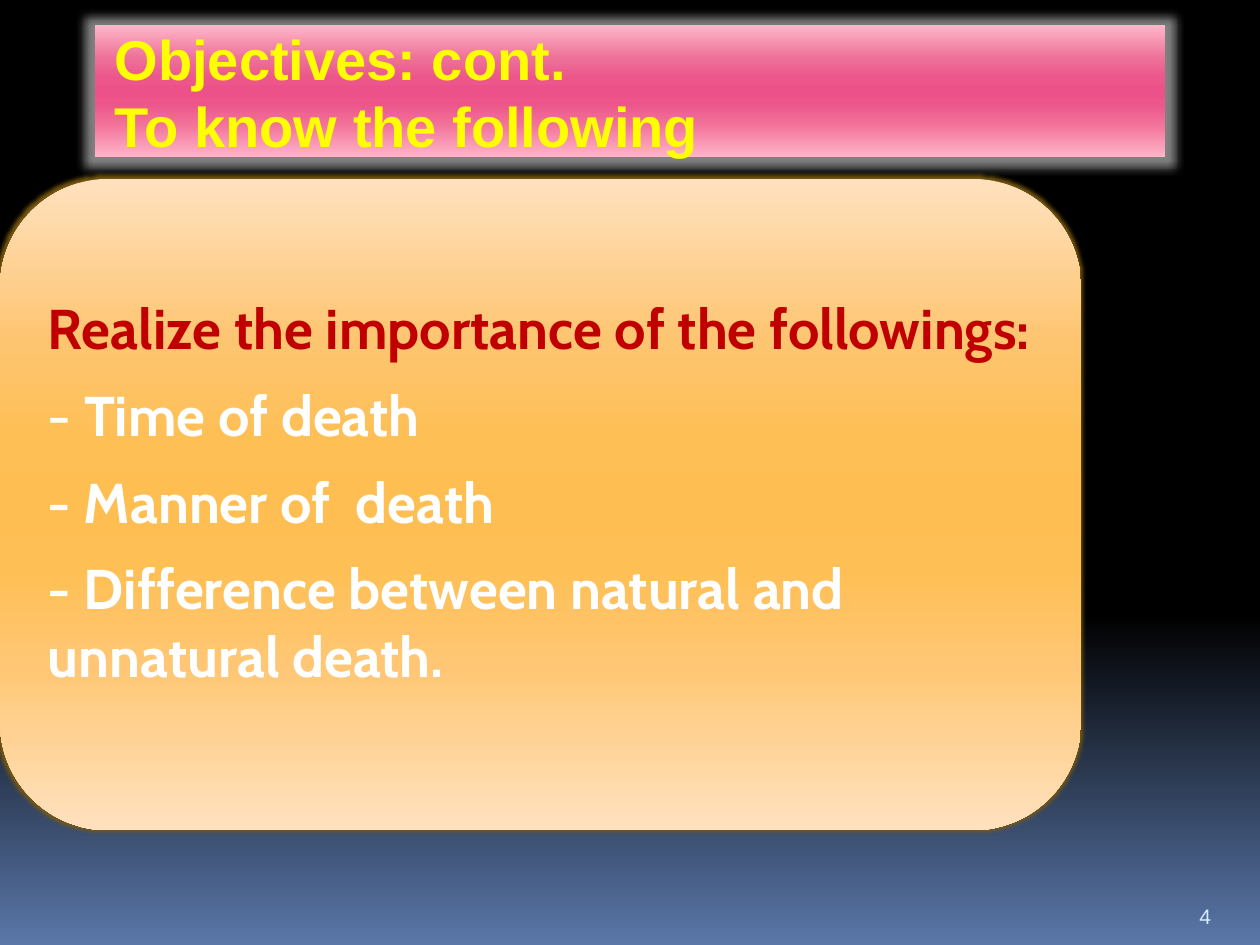
from lxml.etree import SubElement
from pptx import Presentation
from pptx.dml.color import RGBColor
from pptx.enum.shapes import MSO_SHAPE as Shape
from pptx.enum.text import MSO_ANCHOR as Anchor, MSO_AUTO_SIZE as AutoSize, PP_ALIGN as Align
from pptx.oxml.ns import qn
from pptx.util import Inches, Pt

BACKGROUND = [(0, "000000"), (65, "000000"), (100, "5A77A9")]
PINK = [(0, "FFB6C9"), (25, "ED7198"), (40, "EC568B"), (50, "EC5289"),
        (60, "EC568B"), (75, "F2729A"), (100, "FFB6C9")]
ORANGE = [(0, "FFE1BF"), (25, "FEC570"), (40, "FEBF55"), (50, "FEBE51"),
          (60, "FEBF55"), (75, "FFC775"), (100, "FFE1BF")]
TITLE_LINES = ["Objectives: cont.", "To know the following"]
OBJECTIVES = [
    [("Realize the importance of the followings:", "C00000", True)],
    [("- ", "FFFFFF", False), ("Time of death", "FFFFFF", True)],
    [("- Manner of  death", "FFFFFF", True)],
    [("- Difference between natural and unnatural death.", "FFFFFF", True)],
]
PAGE_NUMBER = "4"


def place(shape, left, top, width, height):
    shape.left, shape.top = Inches(left), Inches(top)
    shape.width, shape.height = Inches(width), Inches(height)


def paint_gradient(fill, element, stops):
    fill.gradient()
    fill.gradient_angle = 270
    stop_list = element.find(".//" + qn("a:gsLst"))
    for stop in list(stop_list):
        stop_list.remove(stop)
    for position, color in stops:
        stop = SubElement(stop_list, qn("a:gs"), pos=str(position * 1000))
        SubElement(stop, qn("a:srgbClr"), val=color)


def add_glow(shape, radius, color):
    shape.shadow.inherit = False
    effects = shape.element.spPr.find(qn("a:effectLst"))
    glow = SubElement(effects, qn("a:glow"), rad=str(Inches(radius)))
    SubElement(glow, qn("a:srgbClr"), val=color)


def add_run(paragraph, text, font, size, color, bold=False):
    run = paragraph.add_run()
    run.text = text
    run.font.name, run.font.size, run.font.bold = font, Pt(size), bold
    run.font.color.rgb = RGBColor.from_string(color)


def build_title(slide):
    title = slide.shapes.title
    place(title, 0.75, 0.2, 8.5, 1.05)
    paint_gradient(title.fill, title.element, PINK)
    title.line.fill.background()
    add_glow(title, 0.14, "808080")
    frame = title.text_frame
    frame.auto_size, frame.vertical_anchor = AutoSize.NONE, Anchor.MIDDLE
    frame.margin_left = Inches(0.16)
    paragraph = frame.paragraphs[0]
    paragraph.alignment = Align.LEFT
    for index, line in enumerate(TITLE_LINES):
        if index:
            paragraph.add_line_break()
        add_run(paragraph, line, "Arial", 32, "FFFF00", True)


def build_card(slide):
    card = slide.shapes.add_shape(
        Shape.ROUNDED_RECTANGLE, Inches(0), Inches(1.42), Inches(8.58), Inches(5.17))
    paint_gradient(card.fill, card.element, ORANGE)
    card.line.fill.background()
    add_glow(card, 0.05, "7A5A10")


def build_objectives(slide):
    frame = slide.shapes.add_textbox(
        Inches(0.25), Inches(1.67), Inches(8.08), Inches(4.67)).text_frame
    frame.word_wrap, frame.vertical_anchor = True, Anchor.TOP
    frame.margin_left = frame.margin_right = frame.margin_bottom = Inches(0.13)
    frame.margin_top = Inches(0.66)
    for index, runs in enumerate(OBJECTIVES):
        paragraph = frame.add_paragraph() if index else frame.paragraphs[0]
        paragraph.space_after = Pt(11.2)
        for text, color, bold in runs:
            add_run(paragraph, text, "Cabin", 32, color, bold)


def build_page_number(slide):
    frame = slide.shapes.add_textbox(
        Inches(9.42), Inches(7.02), Inches(0.5), Inches(0.4)).text_frame
    frame.word_wrap, frame.vertical_anchor = True, Anchor.BOTTOM
    add_run(frame.paragraphs[0], PAGE_NUMBER, "Arial", 12, "D6ECFF")


def main():
    presentation = Presentation()
    presentation.slide_width, presentation.slide_height = Inches(10), Inches(7.5)
    slide = presentation.slides.add_slide(presentation.slide_layouts[5])
    paint_gradient(slide.background.fill, slide.element, BACKGROUND)
    build_title(slide)
    build_card(slide)
    build_objectives(slide)
    build_page_number(slide)
    presentation.save("out.pptx")


if __name__ == "__main__":
    main()
